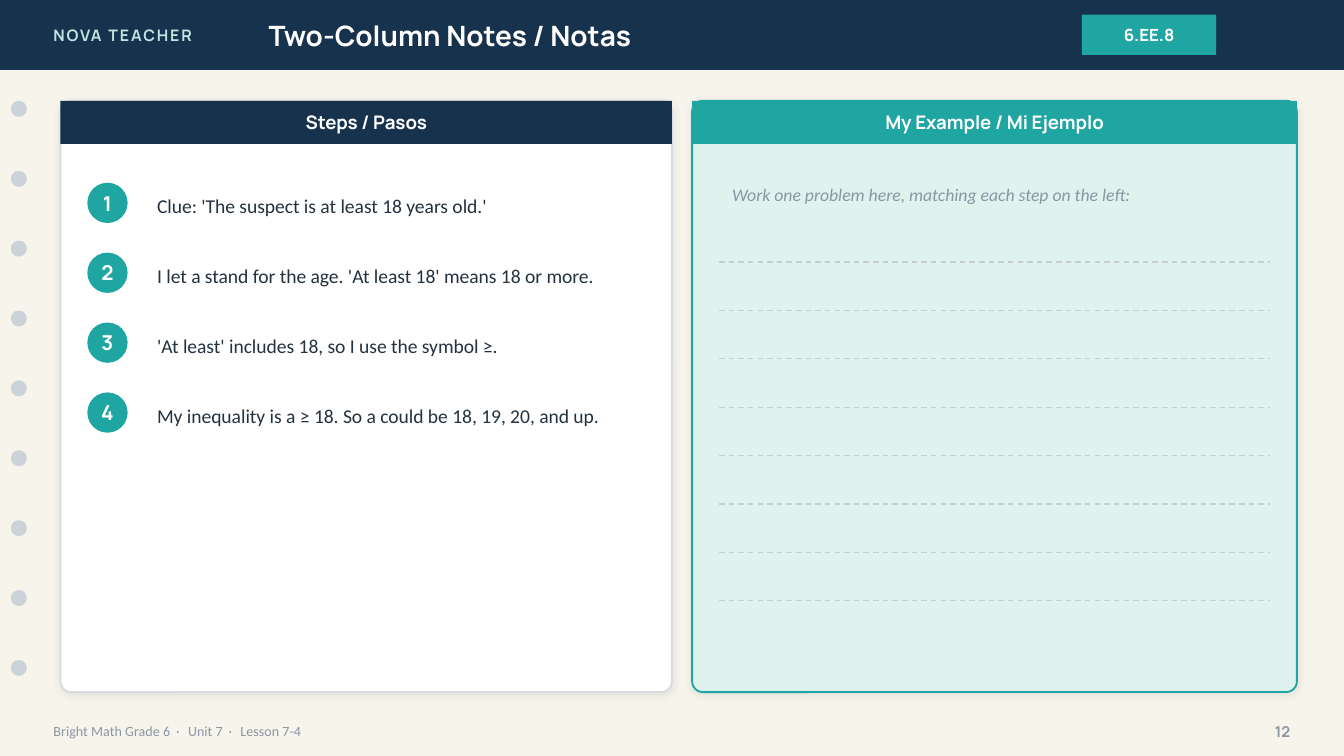
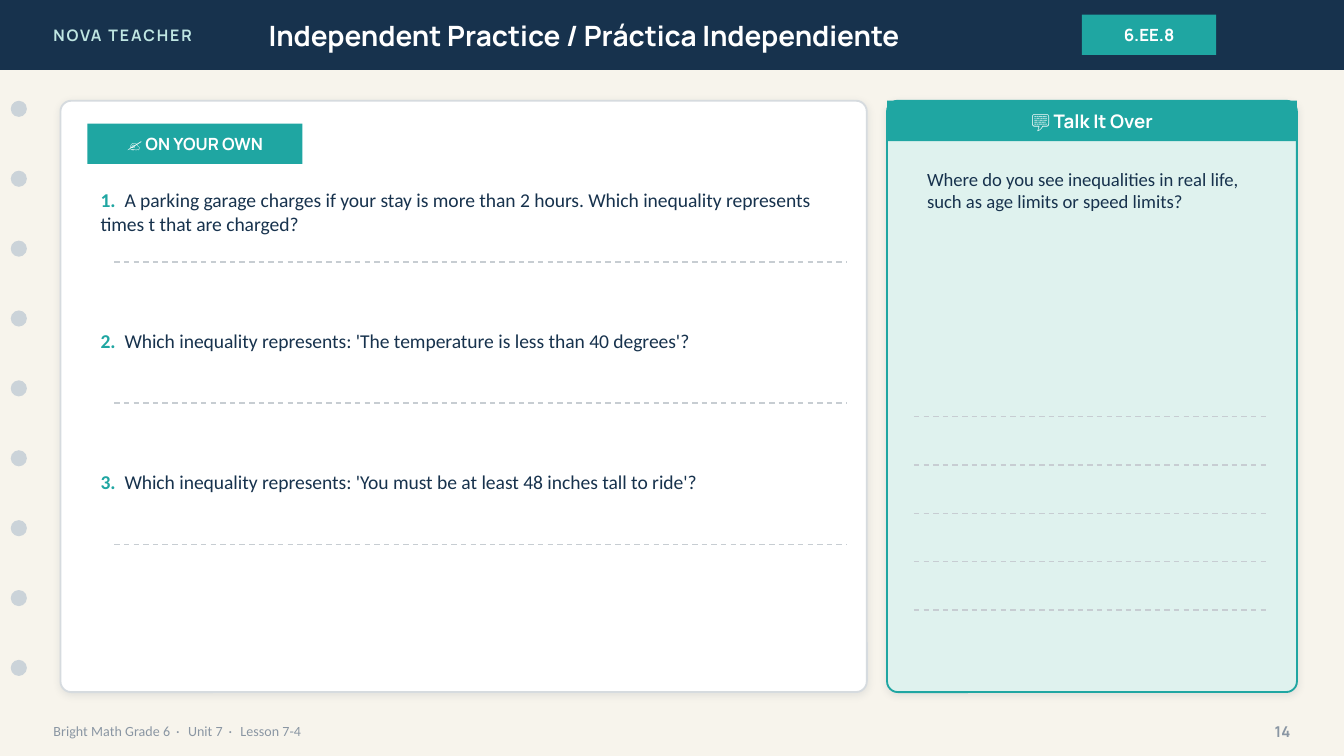
from dataclasses import dataclass

from lxml import etree
from pptx import Presentation
from pptx import util as u
from pptx.dml.color import RGBColor
from pptx.enum import dml, shapes, text
from pptx.oxml import ns


@dataclass(frozen=True)
class Theme:
    paper: str = "F7F4EC"
    navy: str = "17324D"
    teal: str = "1FA6A2"
    mint: str = "DFF2EE"
    pale: str = "BFE6E2"
    white: str = "FFFFFF"
    ink: str = "24323F"
    muted: str = "8A96A3"
    hole: str = "CBD3D9"
    edge: str = "D6DBDF"
    rule: str = "C7CDD2"
    shade: str = "1C2E42"
    display: str = "Manrope"
    body: str = "Calibri"
    title_size: float = 15
    number_size: float = 11
    body_size: float = 10.5
    heading_size: float = 10
    hint_size: float = 9.5
    badge_size: float = 9
    brand_size: float = 8.5
    page_size: float = 8
    footer_size: float = 7.5


theme = Theme()
CENTER, RIGHT = text.PP_ALIGN.CENTER, text.PP_ALIGN.RIGHT
TOP, MIDDLE = text.MSO_ANCHOR.TOP, text.MSO_ANCHOR.MIDDLE
RECT = shapes.MSO_SHAPE.RECTANGLE
ROUND = shapes.MSO_SHAPE.ROUNDED_RECTANGLE
OVAL = shapes.MSO_SHAPE.OVAL

deck = Presentation()
deck.slide_width = u.Inches(10)
deck.slide_height = deck.slide_width * 9 // 16
COLUMN = deck.slide_width / 100
ROW = deck.slide_height / 56.25


def place(page, kind, left, top, width, height, fill=None, edge=None):
    area = [round(n) for n in (left * COLUMN, top * ROW, width * COLUMN, height * ROW)]
    if kind is None:
        return page.shapes.add_textbox(*area)
    box = page.shapes.add_shape(kind, *area)
    box.shadow.inherit = False
    box.fill.solid()
    box.fill.fore_color.rgb = RGBColor.from_string(fill)
    if edge is None:
        box.line.fill.background()
        return box
    box.line.color.rgb = RGBColor.from_string(edge)
    box.line.width = u.Pt(1)
    box.adjustments[0] = 0.8 / min(width, height)
    effects = box._element.spPr.find(ns.qn("a:effectLst"))
    shadow = etree.SubElement(effects, ns.qn("a:outerShdw"), blurRad=str(u.Pt(4)),
                              dist=str(u.Pt(1)), dir="5400000", algn="bl", rotWithShape="0")
    tint = etree.SubElement(shadow, ns.qn("a:srgbClr"), val=theme.shade)
    etree.SubElement(tint, ns.qn("a:alpha"), val="10000")
    return box


def write(box, words, size, color, font=theme.display, bold=True, italic=False,
          align=None, anchor=MIDDLE, spacing=None, tab=None):
    frame = box.text_frame
    frame.word_wrap = True
    frame.vertical_anchor = anchor
    para = frame.paragraphs[0]
    if tab:
        stops = etree.SubElement(para._p.get_or_add_pPr(), ns.qn("a:tabLst"))
        etree.SubElement(stops, ns.qn("a:tab"), pos=str(round(tab * COLUMN)), algn="l")
    if align is not None:
        para.alignment = align
    span = para.add_run()
    span.text = words
    span.font.name, span.font.size = font, u.Pt(size)
    span.font.bold, span.font.italic = bold, italic
    span.font.color.rgb = RGBColor.from_string(color)
    if spacing:
        span._r.get_or_add_rPr().set("spc", str(round(spacing * 100)))


HEADERS = [("Two-Column Notes / Notas", "12"),
           ("Independent Practice / Práctica Independiente", "14")]
FOOTER = [("Bright Math Grade 6", None), (" · ", 1.4), ("Unit 7", None),
          (" · ", 1.4), ("Lesson 7-4", None)]
PANELS = [
    [(4.5, 45.5, 3.2, theme.white, theme.edge, theme.navy, "Steps / Pasos"),
     (51.5, 45, 3.2, theme.mint, theme.teal, theme.teal, "My Example / Mi Ejemplo")],
    [(4.5, 60, 0, theme.white, theme.edge, None, None),
     (66, 30.5, 3, theme.mint, theme.teal, theme.teal, "💬 Talk It Over")],
]
WRITING_LINES = [
    [(53.5, 94.5, 19.5 + 3.6 * i) for i in range(8)],
    [(8.5, 63, 19.5 + 10.5 * i) for i in range(3)]
    + [(68, 94.5, 31 + 3.6 * i) for i in range(5)],
]
STEPS = ["Clue: 'The suspect is at least 18 years old.'",
         "I let a stand for the age. 'At least 18' means 18 or more.",
         "'At least' includes 18, so I use the symbol ≥.",
         "My inequality is a ≥ 18. So a could be 18, 19, 20, and up."]
QUESTIONS = ["A parking garage charges if your stay is more than 2 hours. "
             "Which inequality represents times t that are charged?",
             "Which inequality represents: 'The temperature is less than 40 degrees'?",
             "Which inequality represents: 'You must be at least 48 inches tall to ride'?"]

pages = []
for (title, number), panels, lines in zip(HEADERS, PANELS, WRITING_LINES):
    page = deck.slides.add_slide(deck.slide_layouts[6])
    pages.append(page)
    page.background.fill.solid()
    page.background.fill.fore_color.rgb = RGBColor.from_string(theme.paper)

    place(page, RECT, 0, 0, 100, 5.2, theme.navy)
    write(place(page, None, 3, 0, 24, 5.2), "NOVA TEACHER", theme.brand_size, theme.pale, spacing=1)
    write(place(page, None, 19, 0, 56, 5.2), title, theme.title_size, theme.white)
    badge = place(page, RECT, 80.5, 1.1, 10, 3, theme.teal)
    write(badge, "6.EE.8", theme.badge_size, theme.white, align=CENTER)
    for i in range(9):
        place(page, OVAL, 0.8, 7.5 + 5.2 * i, 1.2, 1.2, theme.hole)
    footer = place(page, None, 3, 53, 70, 2.8)
    for words, spacing in FOOTER:
        write(footer, words, theme.footer_size, theme.muted, font=theme.body, bold=False,
              spacing=spacing)
    write(place(page, None, 92, 53, 5, 2.8), number, theme.page_size, theme.muted, align=RIGHT)

    for left, width, band, fill, edge, band_fill, heading in panels:
        place(page, ROUND, left, 7.5, width, 44, fill, edge)
        if heading:
            header = place(page, RECT, left, 7.5, width, band, band_fill)
            write(header, heading, theme.heading_size, theme.white, align=CENTER)

    for start, end, row in lines:
        line = page.shapes.add_connector(shapes.MSO_CONNECTOR.STRAIGHT, round(start * COLUMN),
                                         round(row * ROW), round(end * COLUMN), round(row * ROW))
        line.line.color.rgb = RGBColor.from_string(theme.rule)
        line.line.width = u.Pt(0.75)
        line.line.dash_style = dml.MSO_LINE.DASH
        etree.SubElement(line._element.spPr, ns.qn("a:effectLst"))

notes, practice = pages

for i, step in enumerate(STEPS):
    row = 13.6 + 5.2 * i
    place(notes, OVAL, 6.5, row, 3, 3, theme.teal)
    write(place(notes, None, 6.5, row, 3, 3), str(i + 1), theme.number_size, theme.white, align=CENTER)
    write(place(notes, None, 10.7, row - 0.6, 37.8, 4.6), step, theme.body_size, theme.ink,
          font=theme.body, bold=False)
write(place(notes, None, 53.5, 12.5, 41, 4), "Work one problem here, matching each step on the left:",
      theme.hint_size, theme.muted, font=theme.body, bold=False, italic=True)

own = place(practice, RECT, 6.5, 9.2, 16, 3, theme.teal)
write(own, "✍️ ON YOUR OWN", theme.badge_size, theme.white, align=CENTER)
for i, question in enumerate(QUESTIONS):
    box = place(practice, None, 6.5, 13.5 + 10.5 * i, 56.5, 5)
    write(box, f"{i + 1}.\t", theme.body_size, theme.teal, font=theme.body, anchor=TOP, tab=1.78)
    write(box, question, theme.body_size, theme.navy, font=theme.body, bold=False, anchor=TOP)
write(place(practice, None, 68, 12, 27, 17),
      "Where do you see inequalities in real life, such as age limits or speed limits?",
      theme.heading_size, theme.navy, font=theme.body, bold=False, anchor=TOP)

deck.save("out.pptx")
